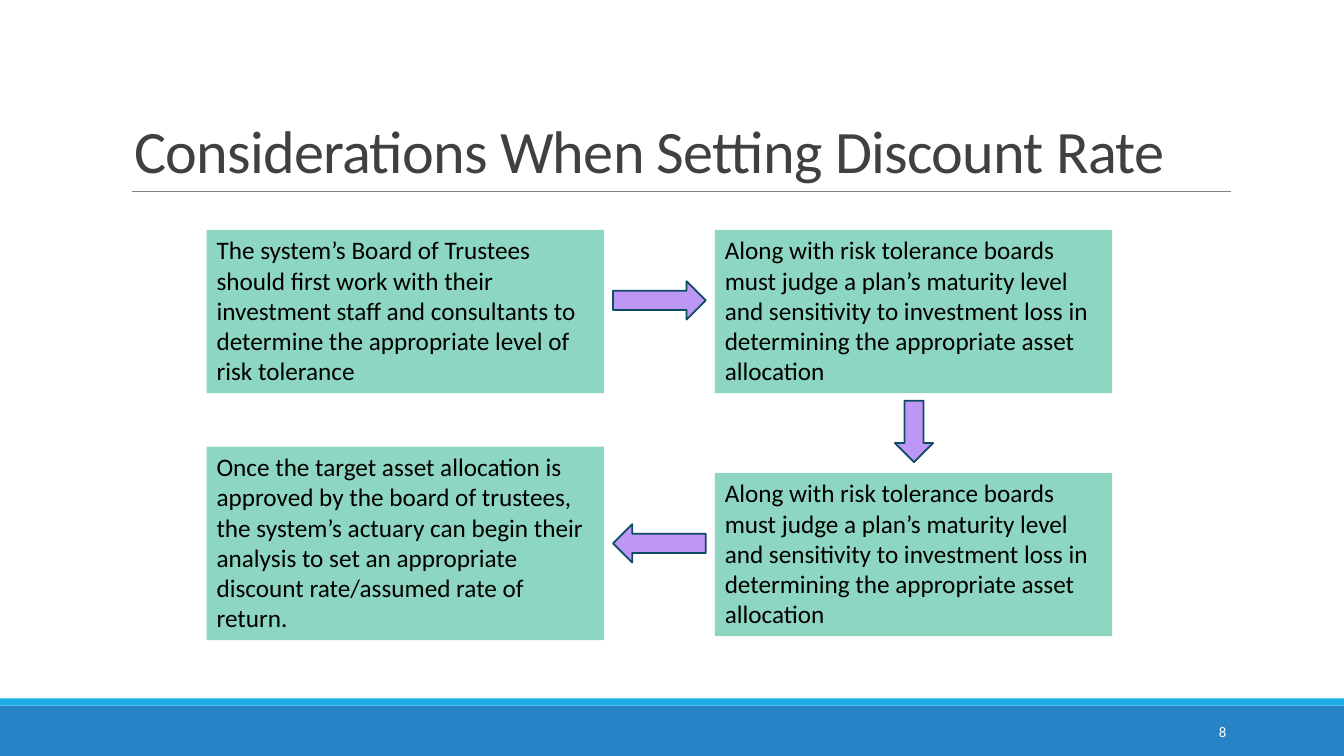
from dataclasses import dataclass

from lxml.etree import SubElement
from pptx import Presentation
from pptx.dml.color import RGBColor
from pptx.enum.shapes import MSO_CONNECTOR, MSO_SHAPE
from pptx.enum.text import MSO_ANCHOR, MSO_AUTO_SIZE, PP_ALIGN
from pptx.oxml.ns import qn
from pptx.shapes.autoshape import Shape
from pptx.slide import Slide
from pptx.text.text import _Paragraph
from pptx.util import Emu, Pt

FONT = "Calibri"
COLORS = {
    "footer": "2683C6",
    "footer_edge": "1CADE4",
    "rule": "808080",
    "title": "404040",
    "box": "8DD6C1",
    "text": "000000",
    "arrow": "BE96F4",
    "arrow_line": "0C4C64",
    "number": "FFFFFF",
}
LEFT_COLUMN, RIGHT_COLUMN, BOX_WIDTH = 205, 709, 394
ARROW_HEIGHT = 38
MATURITY = (
    "Along with risk tolerance boards must judge a plan’s maturity level and "
    "sensitivity to investment loss in determining the appropriate asset allocation"
)


@dataclass(frozen=True)
class Step:
    left: int
    top: int
    height: int
    text: str


@dataclass(frozen=True)
class Arrow:
    left: int
    top: int
    width: int
    rotation: int


STEPS = [
    Step(LEFT_COLUMN, 228, 162,
         "The system’s Board of Trustees should first work with their investment staff "
         "and consultants to determine the appropriate level of risk tolerance"),
    Step(RIGHT_COLUMN, 228, 162, MATURITY),
    Step(RIGHT_COLUMN, 469, 162, MATURITY),
    Step(LEFT_COLUMN, 443, 192,
         "Once the target asset allocation is approved by the board of trustees, the "
         "system’s actuary can begin their analysis to set an appropriate discount "
         "rate/assumed rate of return."),
]
ARROWS = [Arrow(608, 279, 92, 0), Arrow(876, 409, 61, 90), Arrow(608, 520, 92, 180)]


def px(n: int) -> Emu:
    """Convert px, at 100 to the inch, to EMU."""
    return Emu(n * 9144)


def rgb(name: str) -> RGBColor:
    return RGBColor.from_string(COLORS[name])


def format_text(p: _Paragraph, size: float, color: str, align: PP_ALIGN) -> None:
    p.alignment = align
    p.font.name = FONT
    p.font.size = Pt(size)
    p.font.color.rgb = rgb(color)


def add_filled(slide: Slide, kind: MSO_SHAPE, left: int, top: int,
               width: int, height: int, color: str) -> Shape:
    """Add a flat shape with no outline."""
    sp = slide.shapes.add_shape(kind, px(left), px(top), px(width), px(height))
    sp.shadow.inherit = False
    sp.fill.solid()
    sp.fill.fore_color.rgb = rgb(color)
    sp.line.fill.background()
    return sp


def add_title(slide: Slide, text: str) -> None:
    title = slide.shapes.title
    title.left, title.top, title.width, title.height = map(px, (123, 115, 1153, 78))
    tf = title.text_frame
    tf.auto_size = MSO_AUTO_SIZE.NONE
    tf.vertical_anchor = MSO_ANCHOR.MIDDLE
    p = tf.paragraphs[0]
    r = p.add_run()
    r.text = text
    r.font._element.set("spc", "-50")
    p.line_spacing = 0.85
    format_text(p, 43, "title", PP_ALIGN.LEFT)


def add_rule(slide: Slide) -> None:
    rule = slide.shapes.add_connector(
        MSO_CONNECTOR.STRAIGHT, px(131), px(190), px(1221), px(190))
    rule.line.color.rgb = rgb("rule")
    rule.line.width = Pt(0.5)
    SubElement(rule._element.spPr, qn("a:effectLst"))


def add_step(slide: Slide, step: Step) -> None:
    sp = add_filled(slide, MSO_SHAPE.RECTANGLE, step.left, step.top,
                    BOX_WIDTH, step.height, "box")
    tf = sp.text_frame
    tf.word_wrap = True
    tf.auto_size = MSO_AUTO_SIZE.SHAPE_TO_FIT_TEXT
    tf.vertical_anchor = MSO_ANCHOR.TOP
    p = tf.paragraphs[0]
    p.text = step.text
    format_text(p, 18, "text", PP_ALIGN.LEFT)


def add_arrow(slide: Slide, arrow: Arrow) -> None:
    sp = add_filled(slide, MSO_SHAPE.RIGHT_ARROW, arrow.left, arrow.top,
                    arrow.width, ARROW_HEIGHT, "arrow")
    sp.rotation = arrow.rotation
    sp.line.color.rgb = rgb("arrow_line")
    sp.line.width = Pt(1.25)


def add_slide_number(slide: Slide, number: str) -> None:
    box = slide.shapes.add_textbox(px(1083), px(706), px(143), px(40))
    tf = box.text_frame
    tf.word_wrap = True
    tf.vertical_anchor = MSO_ANCHOR.MIDDLE
    p = tf.paragraphs[0]
    p.text = number
    format_text(p, 10.5, "number", PP_ALIGN.RIGHT)


def main() -> None:
    prs = Presentation()
    prs.slide_width, prs.slide_height = px(1333), px(750)
    slide = prs.slides.add_slide(prs.slide_layouts.get_by_name("Title Only"))
    add_filled(slide, MSO_SHAPE.RECTANGLE, 0, 700, 1333, 50, "footer")
    add_filled(slide, MSO_SHAPE.RECTANGLE, 0, 693, 1333, 7, "footer_edge")
    add_rule(slide)
    add_title(slide, "Considerations When Setting Discount Rate")
    for step in STEPS:
        add_step(slide, step)
    for arrow in ARROWS:
        add_arrow(slide, arrow)
    add_slide_number(slide, "8")
    prs.save("out.pptx")


if __name__ == "__main__":
    main()
